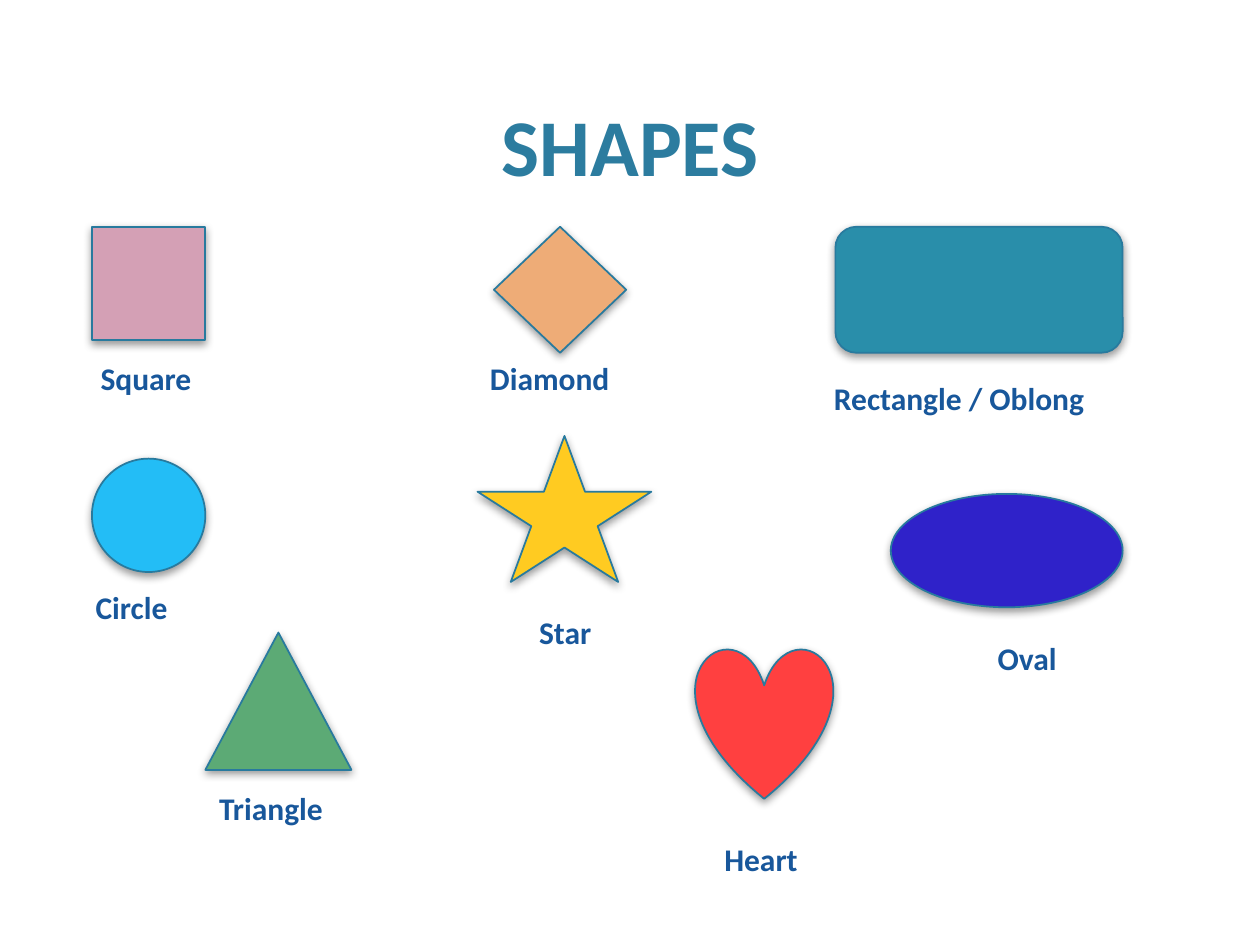
from dataclasses import dataclass

from lxml import etree
from pptx import Presentation
from pptx.dml.color import RGBColor
from pptx.enum import shapes, text
from pptx.oxml import ns
from pptx.util import Inches, Pt


@dataclass(frozen=True)
class Theme:
    font: str = "Calibri"
    title_size: int = 46
    label_size: int = 18
    title_color: str = "2C7C9F"
    label_color: str = "18579B"
    outline: str = "287A9E"
    shadow: str = "000000"
    shadow_opacity: int = 40
    shadow_blur: int = 5
    shadow_distance: int = 2


class ShapesPage:
    def __init__(self, deck, theme):
        self.theme = theme
        self.page = deck.slides.add_slide(deck.slide_layouts[5])

    def set_wording(self, box, wording, size, color):
        box.text_frame.text = wording
        font = box.text_frame.paragraphs[0].runs[0].font
        font.name = self.theme.font
        font.size = Pt(size)
        font.bold = True
        font.color.rgb = RGBColor.from_string(color)

    def title(self, wording, left, top, width, height):
        box = self.page.shapes.title
        box.left, box.top = Inches(left), Inches(top)
        box.width, box.height = Inches(width), Inches(height)
        self.set_wording(box, wording, self.theme.title_size, self.theme.title_color)
        box.text_frame.vertical_anchor = text.MSO_ANCHOR.BOTTOM
        box.text_frame.paragraphs[0].alignment = text.PP_ALIGN.CENTER

    def figure(self, kind, fill, left, top, width, height):
        figure = self.page.shapes.add_shape(
            kind, Inches(left), Inches(top), Inches(width), Inches(height)
        )
        figure.fill.solid()
        figure.fill.fore_color.rgb = RGBColor.from_string(fill)
        figure.line.color.rgb = RGBColor.from_string(self.theme.outline)
        figure.line.width = Pt(1)
        self.drop_shadow(figure)

    def drop_shadow(self, figure):
        figure.shadow.inherit = False
        effects = figure.element.spPr.find(ns.qn("a:effectLst"))
        shadow = etree.SubElement(
            effects,
            ns.qn("a:outerShdw"),
            blurRad=str(Pt(self.theme.shadow_blur)),
            dist=str(Pt(self.theme.shadow_distance)),
            dir=str(90 * 60000),
            rotWithShape="0",
        )
        color = etree.SubElement(shadow, ns.qn("a:srgbClr"), val=self.theme.shadow)
        opacity = str(self.theme.shadow_opacity * 1000)
        etree.SubElement(color, ns.qn("a:alpha"), val=opacity)

    def label(self, wording, left, top, width):
        box = self.page.shapes.add_textbox(
            Inches(left), Inches(top), Inches(width), Inches(0.4)
        )
        self.set_wording(box, wording, self.theme.label_size, self.theme.label_color)
        box.text_frame.word_wrap = False
        box.text_frame.auto_size = text.MSO_AUTO_SIZE.SHAPE_TO_FIT_TEXT


KIND = shapes.MSO_SHAPE
FIGURES = [
    (KIND.RECTANGLE, "D4A0B5", 0.73, 1.8, 0.9, 0.9),
    (KIND.OVAL, "23BDF6", 0.73, 3.64, 0.9, 0.9),
    (KIND.ISOSCELES_TRIANGLE, "5CAA75", 1.63, 5.02, 1.16, 1.09),
    (KIND.DIAMOND, "EEAC77", 3.92, 1.8, 1.05, 1),
    (KIND.STAR_5_POINT, "FFCB21", 3.79, 3.46, 1.38, 1.16),
    (KIND.HEART, "FF4040", 5.52, 5.14, 1.09, 1.2),
    (KIND.OVAL, "2F22C9", 7.07, 3.92, 1.84, 0.9),
    (KIND.ROUNDED_RECTANGLE, "298EAA", 6.63, 1.8, 2.28, 1),
]
LABELS = [
    ("Square", 0.7, 2.8, 1.06),
    ("Circle", 0.66, 4.62, 0.92),
    ("Triangle", 1.64, 6.21, 1.2),
    ("Heart", 5.65, 6.62, 0.89),
    ("Diamond", 3.79, 2.8, 1.29),
    ("Star", 4.18, 4.82, 0.71),
    ("Rectangle / Oblong", 6.52, 2.96, 2.58),
    ("Oval", 7.82, 5.02, 0.74),
]


def main():
    deck = Presentation()
    deck.slide_width, deck.slide_height = Inches(10), Inches(7.5)
    page = ShapesPage(deck, Theme())
    page.title("SHAPES", 0.6, 0.12, 8.8, 1.46)
    for figure in FIGURES:
        page.figure(*figure)
    for label in LABELS:
        page.label(*label)
    deck.save("out.pptx")


if __name__ == "__main__":
    main()
